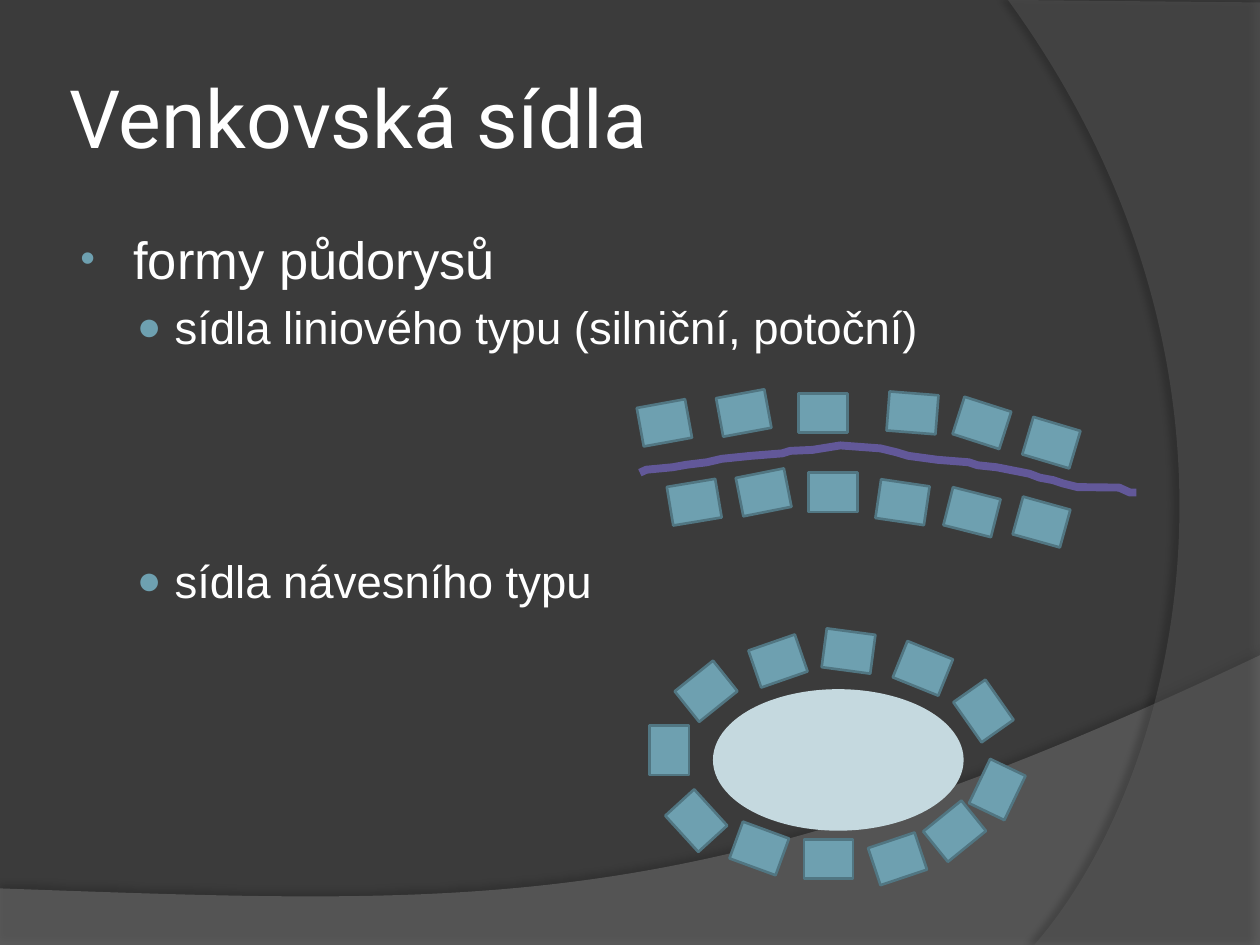
import pptx
import pptx.dml.color
import pptx.enum.shapes
import pptx.enum.text
import pptx.oxml.ns
import pptx.util
from lxml import etree
from pptx.dml.color import RGBColor
from pptx.util import Cm, Pt

BACKGROUND = RGBColor(0x3B, 0x3B, 0x3B)
HILL = RGBColor(0x7F, 0x7F, 0x7F)
SIDE_ARC = RGBColor(0x5E, 0x5E, 0x5E)
WHITE = RGBColor(0xFF, 0xFF, 0xFF)
HOUSE = RGBColor(0x6E, 0xA0, 0xB0)
HOUSE_EDGE = RGBColor(0x51, 0x76, 0x82)
GREEN = RGBColor(0xC5, 0xD9, 0xDF)
ROAD = RGBColor(0x62, 0x58, 0x99)

WIDTH, HEIGHT = 25.4, 19.05
HOUSE_WIDTH, HOUSE_HEIGHT = 0.99, 0.79
UNITS_PER_CM = 1000

UPPER_HOUSES = [
    (12.9, 8.13, 349.7), (14.5, 7.93, 349.5), (16.1, 7.93, 0),
    (17.9, 7.93, 4.5), (19.3, 8.13, 17.8), (20.7, 8.53, 16.6),
]
LOWER_HOUSES = [
    (13.5 + 1.4 * index, top, angle)
    for index, (top, angle) in enumerate([
        (9.73, 350.5), (9.53, 348.8), (9.53, 0),
        (9.73, 8.4), (9.93, 14.2), (10.13, 15.5),
    ])
]
GREEN_HOUSES = [
    (13.74, 13.54, 321.3), (15.19, 12.93, 340.9), (16.61, 12.73, 7.6),
    (18.11, 13.08, 22), (19.33, 13.94, 54.9), (19.61, 15.52, 295.6),
    (18.75, 16.36, 321), (17.6, 16.92, 341.5), (16.21, 16.92, 0),
    (14.81, 16.71, 20.1), (13.54, 16.15, 47.6), (13, 14.73, 270),
]
ROAD_POINTS = [
    (12.9, 9.53), (13.03, 9.47), (13.56, 9.42), (13.84, 9.37), (14.25, 9.32),
    (14.55, 9.25), (15.14, 9.19), (15.77, 9.14), (15.93, 9.09), (16.38, 9.07),
    (16.94, 8.98), (17.75, 9.04), (18.08, 9.12), (18.31, 9.19), (18.9, 9.27),
    (19.53, 9.32), (19.71, 9.38), (20.09, 9.42), (20.75, 9.55), (20.96, 9.63),
    (21.23, 9.68), (21.44, 9.75), (21.72, 9.82), (22.56, 9.83), (22.78, 9.93),
    (22.91, 9.93),
]


def add_xml(parent, tag, **attributes):
    return etree.SubElement(parent, pptx.oxml.ns.qn(tag), attributes)


def add_outline(slide, points, closed):
    scaled = [(x * UNITS_PER_CM, y * UNITS_PER_CM) for x, y in points]
    builder = slide.shapes.build_freeform(*scaled[0], scale=Cm(1) / UNITS_PER_CM)
    builder.add_line_segments(scaled[1:], close=closed)
    outline = builder.convert_to_shape()
    outline.shadow.inherit = False
    return outline


def bend_first_segment(outline, points, controls):
    segment = next(outline.element.iter(pptx.oxml.ns.qn("a:lnTo")))
    segment.tag = pptx.oxml.ns.qn("a:cubicBezTo")
    left, top = (min(values) for values in zip(*points))
    for position, (x, y) in enumerate(controls):
        control = etree.Element(pptx.oxml.ns.qn("a:pt"),
                                x=str(round((x - left) * UNITS_PER_CM)),
                                y=str(round((y - top) * UNITS_PER_CM)))
        segment.insert(position, control)


def add_backdrop(slide, points, controls, color, opacity,
                 shadow_opacity, distance, direction):
    backdrop = add_outline(slide, points, closed=True)
    bend_first_segment(backdrop, points, controls)
    backdrop.fill.solid()
    backdrop.fill.fore_color.rgb = color
    backdrop.line.fill.background()
    properties = backdrop.element.spPr
    fill_color = properties.find(pptx.oxml.ns.qn("a:solidFill"))[0]
    add_xml(fill_color, "a:alpha", val=str(opacity * 1000))
    effects = properties.find(pptx.oxml.ns.qn("a:effectLst"))
    shadow = add_xml(effects, "a:outerShdw", blurRad=str(Pt(4)), dist=str(Pt(distance)),
                     dir=str(direction * 60000), algn="ctr", rotWithShape="0")
    shadow_color = add_xml(shadow, "a:srgbClr", val="000000")
    add_xml(shadow_color, "a:alpha", val=str(shadow_opacity * 1000))


def add_shape(slide, preset, left, top, width, height, fill, edge):
    shape = slide.shapes.add_shape(preset, Cm(left), Cm(top), Cm(width), Cm(height))
    shape.shadow.inherit = False
    shape.fill.solid()
    shape.fill.fore_color.rgb = fill
    shape.line.color.rgb = edge
    shape.line.width = Pt(1.5)
    return shape


def add_houses(slide, houses):
    for left, top, angle in houses:
        house = add_shape(slide, pptx.enum.shapes.MSO_SHAPE.RECTANGLE, left, top,
                          HOUSE_WIDTH, HOUSE_HEIGHT, HOUSE, HOUSE_EDGE)
        house.rotation = angle


def add_road(slide):
    road = add_outline(slide, ROAD_POINTS, closed=False)
    road.fill.background()
    road.line.color.rgb = ROAD
    road.line.width = Pt(4.5)


def format_run(paragraph, font, size):
    for run in paragraph.runs:
        run.font.name = font
        run.font.size = Pt(size)
        run.font.color.rgb = WHITE


def add_title(slide, text):
    frame = slide.shapes.add_textbox(Cm(1.27), Cm(0.76), Cm(20.75), Cm(3.18)).text_frame
    frame.word_wrap = True
    frame.vertical_anchor = pptx.enum.text.MSO_ANCHOR.MIDDLE
    frame.margin_left = frame.margin_right = Cm(0.13)
    frame.margin_top = frame.margin_bottom = Cm(0.13)
    frame.text = text
    format_run(frame.paragraphs[0], "Roboto", 46)


def set_bullet(paragraph, level, mark, percent, indent, hanging):
    paragraph.level = level
    properties = paragraph._p.get_or_add_pPr()
    properties.set("marL", str(Cm(indent)))
    properties.set("indent", str(-Cm(hanging)))
    add_xml(add_xml(properties, "a:buClr"), "a:srgbClr", val=str(HOUSE))
    add_xml(properties, "a:buSzPct", val=str(percent * 1000))
    add_xml(properties, "a:buFont", typeface="Arial")
    add_xml(properties, "a:buChar", char=mark)


def add_outline_text(slide):
    frame = slide.shapes.add_textbox(Cm(1.27), Cm(4.45), Cm(20.75), Cm(13.69)).text_frame
    frame.word_wrap = True
    items = [
        ("formy půdorysů", 0, 6),
        ("sídla liniového typu (silniční, potoční)", 1, 5),
        ("sídla návesního typu", 1, 114.4),
    ]
    styles = [(30, "•", 80, 1.17, 1.07), (26, "●", 90, 2, 0.76)]
    frame.text = "\n".join(text for text, level, gap in items)
    for paragraph, (text, level, gap) in zip(frame.paragraphs, items):
        size, mark, percent, indent, hanging = styles[level]
        paragraph.space_before = Pt(gap)
        set_bullet(paragraph, level, mark, percent, indent, hanging)
        format_run(paragraph, "Arial", size)


def main():
    presentation = pptx.Presentation()
    presentation.slide_width = Cm(WIDTH)
    presentation.slide_height = Cm(HEIGHT)
    slide = presentation.slides.add_slide(presentation.slide_layouts[6])
    slide.background.fill.solid()
    slide.background.fill.fore_color.rgb = BACKGROUND

    hill = [(WIDTH, 13.21), (0, 17.91), (0, HEIGHT), (WIDTH, HEIGHT)]
    add_backdrop(slide, hill, [(14.2, 18.52), (9.93, 18.26)], HILL, 45, 35, 3.5, 270)
    arc = [(20.85, HEIGHT), (20.32, 0), (WIDTH, 0.05), (WIDTH, HEIGHT)]
    add_backdrop(slide, arc, [(23.75, 15.72), (25.86, 7.62)], SIDE_ARC, 40, 45, 4, 180)

    add_title(slide, "Venkovská sídla")
    add_outline_text(slide)
    add_road(slide)
    add_houses(slide, UPPER_HOUSES + LOWER_HOUSES)
    add_shape(slide, pptx.enum.shapes.MSO_SHAPE.OVAL, 14.4, 13.92, 5, 2.8, GREEN, GREEN)
    add_houses(slide, GREEN_HOUSES)
    presentation.save("out.pptx")


if __name__ == "__main__":
    main()
